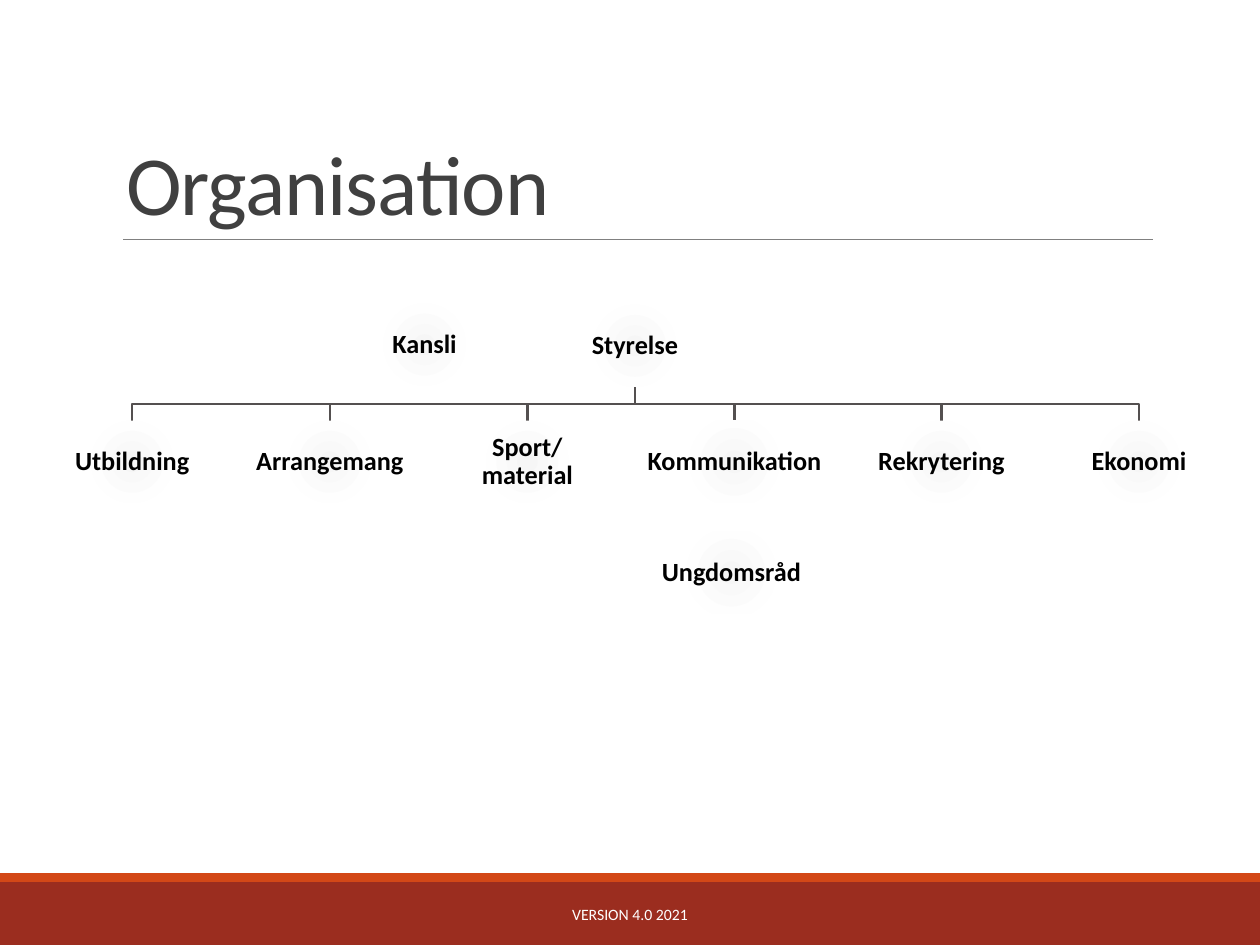
from lxml.etree import SubElement
from pptx import Presentation
from pptx.dml.color import RGBColor
from pptx.enum.shapes import MSO_CONNECTOR, MSO_SHAPE
from pptx.enum.text import MSO_ANCHOR, MSO_AUTO_SIZE, PP_ALIGN
from pptx.oxml import parse_xml
from pptx.oxml.ns import nsdecls, qn
from pptx.util import Inches, Pt

# Content
TITLE = "Organisation"
FOOTER = "VERSION 4.0 2021"
BOARD = "Styrelse"
OFFICE = "Kansli"
YOUTH = "Ungdomsråd"
# Department and box width
DEPARTMENTS = [
    ("Utbildning", 1.3),
    ("Arrangemang", 1.3),
    ("Sport/\nmaterial", 1.3),
    ("Kommunikation", 1.45),
    ("Rekrytering", 1.3),
    ("Ekonomi", 1.3),
]

COLORS = {
    "footer": "9B2D1F", "stripe": "D34817", "rule": "808080",
    "title": "404040", "branch": "545050", "label": "000000",
    "footer_text": "FFFFFF",
}
GLOW = [(0, "F6F6F6"), (45, "FEFEFE"), (100, "FFFFFF")]
FONT = "Calibri"

# Layout in inches
WIDTH, HEIGHT = 10, 7.5
FOOTER_TOP, STRIPE_HEIGHT = 7, 0.07
BOX_WIDTH, WIDE_WIDTH, BOX_HEIGHT = 1.3, 1.45, 0.65
ROW_LEFT, ROW_RIGHT = 0.4, 9.69
BOARD_LEFT, BOARD_TOP, DEPARTMENT_TOP, YOUTH_TOP = 4.39, 2.42, 3.34, 4.22


def color(name):
    return RGBColor.from_string(COLORS[name])


def write(shape, text, size, ink, bold=False, align=PP_ALIGN.CENTER,
          anchor=MSO_ANCHOR.MIDDLE, line_spacing=1.0, tracking=None, inset=None):
    frame = shape.text_frame
    frame.word_wrap = True
    frame.auto_size = MSO_AUTO_SIZE.NONE
    frame.vertical_anchor = anchor
    if inset is not None:
        frame.margin_left = frame.margin_right = Inches(inset)
        frame.margin_top = frame.margin_bottom = Inches(inset)
    paragraph = frame.paragraphs[0]
    paragraph.text = text
    paragraph.alignment = align
    paragraph.line_spacing = line_spacing
    for run in paragraph.runs:
        run.font.name = FONT
        run.font.size = Pt(size)
        run.font.bold = bold
        run.font.color.rgb = color(ink)
        if tracking is not None:
            run.font._element.set("spc", str(int(tracking * 100)))


def add_rectangle(slide, left, top, width, height):
    rectangle = slide.shapes.add_shape(
        MSO_SHAPE.RECTANGLE, Inches(left), Inches(top), Inches(width), Inches(height))
    rectangle.shadow.inherit = False
    rectangle.line.fill.background()
    return rectangle


def add_band(slide, top, height, fill):
    band = add_rectangle(slide, 0, top, WIDTH, height)
    band.fill.solid()
    band.fill.fore_color.rgb = color(fill)


def add_unit(slide, text, left, top, width=BOX_WIDTH):
    unit = add_rectangle(slide, left, top, width, BOX_HEIGHT)
    stops = "".join(
        f'<a:gs pos="{share * 1000}"><a:srgbClr val="{tone}"/></a:gs>'
        for share, tone in GLOW)
    gradient = parse_xml(
        f'<a:gradFill {nsdecls("a")}><a:gsLst>{stops}</a:gsLst><a:path path="circle">'
        '<a:fillToRect l="100000" t="100000" r="100000" b="100000"/>'
        '</a:path></a:gradFill>')
    unit._element.spPr.find(qn("a:prstGeom")).addnext(gradient)
    write(unit, text, 15, "label", bold=True, line_spacing=0.9, inset=0.01)


def add_branch(slide, start_x, end_x):
    start_y, end_y = BOARD_TOP + BOX_HEIGHT, DEPARTMENT_TOP
    middle_y = (start_y + end_y) / 2
    outline = slide.shapes.build_freeform(Inches(start_x), Inches(start_y))
    outline.add_line_segments(
        [(Inches(x), Inches(y)) for x, y in
         [(start_x, middle_y), (end_x, middle_y), (end_x, end_y)]], close=False)
    branch = outline.convert_to_shape()
    branch.shadow.inherit = False
    branch.fill.background()
    branch.line.color.rgb = color("branch")
    branch.line.width = Pt(1.25)


def main():
    deck = Presentation()
    deck.slide_width, deck.slide_height = Inches(WIDTH), Inches(HEIGHT)
    slide = deck.slides.add_slide(deck.slide_layouts[5])

    # Footer bands and title rule
    add_band(slide, FOOTER_TOP, HEIGHT - FOOTER_TOP, "footer")
    add_band(slide, FOOTER_TOP - STRIPE_HEIGHT, STRIPE_HEIGHT, "stripe")
    rule = slide.shapes.add_connector(
        MSO_CONNECTOR.STRAIGHT, Inches(0.98), Inches(1.9), Inches(9.15), Inches(1.9))
    rule.line.color.rgb = color("rule")
    rule.line.width = Pt(0.5)
    SubElement(rule._element.spPr, qn("a:effectLst"))

    # Title
    title = slide.shapes.title
    title.left, title.top = Inches(0.9), Inches(0.31)
    title.width, title.height = Inches(8.25), Inches(1.59)
    write(title, TITLE, 48, "title", align=PP_ALIGN.LEFT,
          anchor=MSO_ANCHOR.BOTTOM, line_spacing=0.85, tracking=-0.5)

    # Department row: equal gaps between boxes of unequal width
    total = sum(width for _, width in DEPARTMENTS)
    gap = (ROW_RIGHT - ROW_LEFT - total) / (len(DEPARTMENTS) - 1)
    row, left = [], ROW_LEFT
    for name, width in DEPARTMENTS:
        row.append((name, left, width))
        left += width + gap

    # Branches lie behind the units
    for _, left, width in row:
        add_branch(slide, BOARD_LEFT + BOX_WIDTH / 2, left + width / 2)

    add_unit(slide, OFFICE, 2.72, 2.41)
    add_unit(slide, YOUTH, 5.08, YOUTH_TOP, WIDE_WIDTH)
    add_unit(slide, BOARD, BOARD_LEFT, BOARD_TOP)
    for name, left, width in row:
        add_unit(slide, name, left, DEPARTMENT_TOP, width)

    # Footer text
    footer = slide.shapes.add_textbox(
        Inches(3.02), Inches(7.06), Inches(3.96), Inches(0.4))
    write(footer, FOOTER, 9, "footer_text")

    deck.save("out.pptx")


if __name__ == "__main__":
    main()
